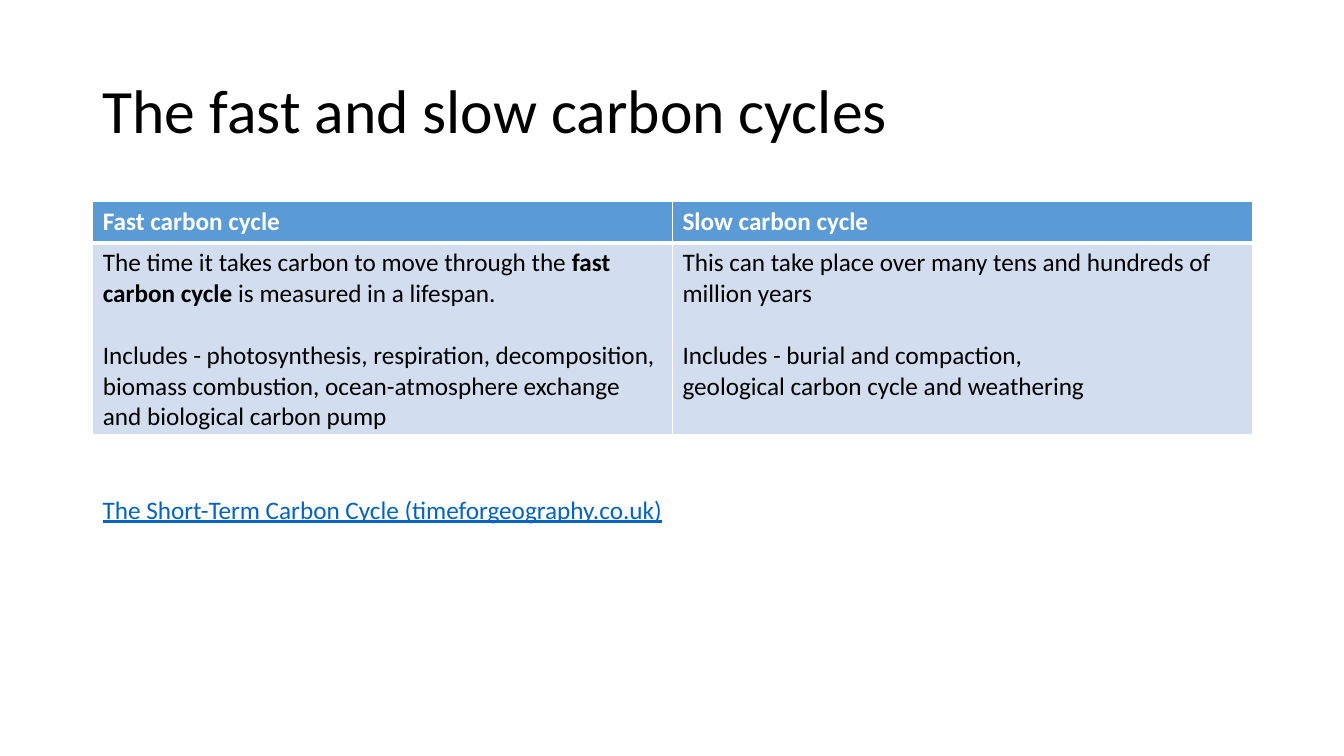
from lxml import etree
from pptx import Presentation, util as u
from pptx.dml.color import RGBColor
from pptx.enum import text as t
from pptx.oxml import ns

deck = Presentation()
deck.slide_width, deck.slide_height = u.Inches(13.33), u.Inches(7.5)
slide = deck.slides.add_slide(deck.slide_layouts[6])
left, wide = u.Inches(0.92), u.Inches(11.5)


def paint(color, hue):
    color.rgb = RGBColor.from_string(hue)


def write(par, runs, size, hue, bold=False):
    """Fill a paragraph; every second run is bold."""
    for i, words in enumerate(runs):
        run = par.add_run()
        run.text = words
        if len(runs) > 1:
            run.font.bold = i % 2 == 1
    font = par.font
    font.name, font.size, font.bold = "Calibri", u.Pt(size), bold
    paint(font.color, hue)


# Title
box = slide.shapes.add_textbox(left, u.Inches(0.4), wide, u.Inches(1.45))
frame = box.text_frame
frame.word_wrap = True
frame.vertical_anchor = t.MSO_ANCHOR.MIDDLE
title = frame.paragraphs[0]
title.line_spacing = 0.9
write(title, ["The fast and slow carbon cycles"], 44, "000000")

# Table: one heading row, one body row, two equal columns
heads = ["Fast carbon cycle", "Slow carbon cycle"]
bodies = [
    [["The time it takes carbon to move through the ", "fast carbon cycle",
      " is measured in a lifespan."],
     ["Includes - photosynthesis, respiration, decomposition, biomass "
      "combustion, ocean-atmosphere exchange and biological carbon pump"]],
    [["This can take place over many tens and hundreds of million years"],
     ["Includes - burial and compaction,"],
     ["geological carbon cycle and weathering"]],
]
rows = [
    ([[[head]] for head in heads], 0.41, "5B9BD5", "FFFFFF", True),
    (bodies, 1.9, "D2DEEF", "000000", False),
]
grid = slide.shapes.add_table(2, 2, left, u.Inches(2), wide, u.Inches(2.31)).table
for r, (texts, high, fill, hue, bold) in enumerate(rows):
    grid.rows[r].height = u.Inches(high)
    for c, pars in enumerate(texts):
        cell = grid.cell(r, c)
        frame = cell.text_frame
        for i, runs in enumerate(pars):
            par = frame.add_paragraph() if i else frame.paragraphs[0]
            if i == 1:
                par.space_before = u.Pt(22)
            write(par, runs, 18, hue, bold)

        # White borders, thick between heading and body
        props = cell._tc.get_or_add_tcPr()
        for side in "LRTB":
            thick = (r, side) in [(0, "B"), (1, "T")]
            line = etree.SubElement(props, ns.qn(f"a:ln{side}"),
                                    w=str(u.Pt(3 if thick else 1)))
            solid = etree.SubElement(line, ns.qn("a:solidFill"))
            etree.SubElement(solid, ns.qn("a:srgbClr"), val="FFFFFF")
        cell.fill.solid()
        paint(cell.fill.fore_color, fill)

# Source line
box = slide.shapes.add_textbox(left, u.Inches(4.85), u.Inches(11.07), u.Inches(0.4))
box.text_frame.word_wrap = True
source = box.text_frame.paragraphs[0]
write(source, ["The Short-Term Carbon Cycle (timeforgeography.co.uk)"], 18, "0563C1")
source.font.underline = True

deck.save("out.pptx")
